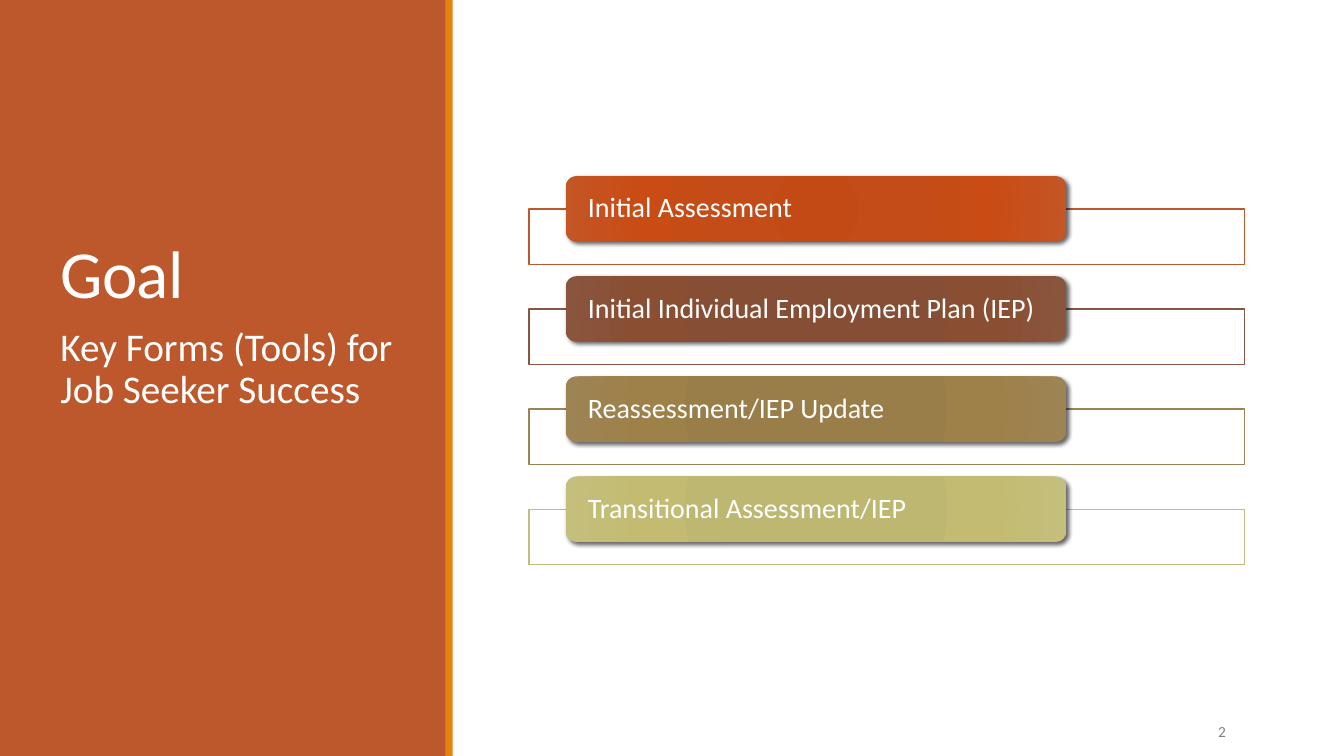
"""Build the slide that lists the key forms for job seeker success."""
import pptx
import pptx.util
import pptx.dml.color
import pptx.enum.shapes
import pptx.enum.text
import pptx.oxml
import pptx.oxml.ns

TITLE = "Goal"
SUBTITLE = "Key Forms (Tools) for Job Seeker Success"
PAGE_NUMBER = "2"
FORMS = [
    ("Initial Assessment", "BD582C", ("C44A15", "C34C18", "C94C15", "C45525")),
    ("Initial Individual Employment Plan (IEP)", "865640", ("874C32", "864E34", "8A4E33", "8A553D")),
    ("Reassessment/IEP Update", "9B8357", ("9A7D48", "9A7E4A", "9E8049", "9E8454")),
    ("Transitional Assessment/IEP", "C2BC80", ("BEB76E", "BEB771", "C3BB71", "C5BF7D")),
]
PANELS = [("BD582C", (0, 0, 319, 540)), ("E48312", (318.2, 0, 5.2, 540))]
GRADIENT_STOPS = (0, 34, 70, 100)
FIRST_TOP, ROW_STEP = 125.8, 71.5
PILL_LEFT, PILL_WIDTH, PILL_HEIGHT = 404, 357.8, 46.8
FRAME_LEFT, FRAME_WIDTH, FRAME_HEIGHT, FRAME_DROP = 378, 511.2, 39.6, 23.4

Pt = pptx.util.Pt
SHAPE = pptx.enum.shapes.MSO_SHAPE
ANCHOR = pptx.enum.text.MSO_ANCHOR
ALIGN = pptx.enum.text.PP_ALIGN
NAMESPACE = pptx.oxml.ns.nsdecls("a")


def color(value):
    return pptx.dml.color.RGBColor.from_string(value)


def assign(target, values):
    for name, value in values.items():
        setattr(target, name, value)


def place(box, left, top, width, height):
    assign(box, {"left": Pt(left), "top": Pt(top), "width": Pt(width), "height": Pt(height)})


def write(box, text, size, ink="FFFFFF", frame_format=None, para_format=None):
    frame = box.text_frame
    assign(frame, {"word_wrap": True, "auto_size": pptx.enum.text.MSO_AUTO_SIZE.NONE})
    assign(frame, frame_format or {})
    para = frame.paragraphs[0]
    assign(para, {"alignment": ALIGN.LEFT, **(para_format or {})})
    span = para.add_run()
    span.text = text
    assign(span.font, {"size": Pt(size), "name": "Calibri"})
    span.font.color.rgb = color(ink)
    return para, span


def add_block(page, kind, position, fill):
    block = page.shapes.add_shape(kind, *map(Pt, position))
    block.shadow.inherit = False
    block.fill.solid()
    block.fill.fore_color.rgb = color(fill)
    block.line.fill.background()
    return block


def add_frame(page, top, edge):
    frame = add_block(page, SHAPE.RECTANGLE, (FRAME_LEFT, top, FRAME_WIDTH, FRAME_HEIGHT), "FFFFFF")
    frame.line.color.rgb = color(edge)
    frame.line.width = Pt(1)
    white = frame.element.spPr.find(pptx.oxml.ns.qn("a:solidFill"))[0]
    white.append(pptx.oxml.parse_xml(f'<a:alpha {NAMESPACE} val="90000"/>'))


def add_pill(page, top, text, shades):
    position = (PILL_LEFT, top, PILL_WIDTH, PILL_HEIGHT)
    pill = add_block(page, SHAPE.ROUNDED_RECTANGLE, position, shades[0])
    stops = "".join(
        f'<a:gs pos="{stop * 1000}"><a:srgbClr val="{shade}"/></a:gs>'
        for stop, shade in zip(GRADIENT_STOPS, shades)
    )
    gradient = pptx.oxml.parse_xml(
        f'<a:gradFill {NAMESPACE} rotWithShape="1"><a:gsLst>{stops}</a:gsLst><a:path path="circle">'
        '<a:fillToRect l="100000" t="100000" r="100000" b="100000"/></a:path></a:gradFill>'
    )
    shadow = pptx.oxml.parse_xml(
        f'<a:outerShdw {NAMESPACE} blurRad="{Pt(3)}" dist="{Pt(2)}" dir="2700000" algn="tl" '
        'rotWithShape="0"><a:srgbClr val="000000"><a:alpha val="60000"/></a:srgbClr></a:outerShdw>'
    )
    properties = pill.element.spPr
    properties.replace(properties.find(pptx.oxml.ns.qn("a:solidFill")), gradient)
    properties.find(pptx.oxml.ns.qn("a:effectLst")).append(shadow)
    insets = {"margin_left": Pt(13.7), "margin_right": Pt(13.7), "margin_top": 0, "margin_bottom": 0}
    write(pill, text, 20, frame_format={"vertical_anchor": ANCHOR.MIDDLE, **insets},
          para_format={"line_spacing": 0.9})


def main():
    deck = pptx.Presentation()
    assign(deck, {"slide_width": Pt(960), "slide_height": Pt(540)})
    page = deck.slides.add_slide(deck.slide_layouts[1])
    title, body = page.placeholders

    for fill, position in PANELS:
        add_block(page, SHAPE.RECTANGLE, position, fill)
    for box in (title, body):
        box.element.getparent().append(box.element)

    place(title, 36, 46.8, 252, 180)
    heading, span = write(title, TITLE, 48, frame_format={"vertical_anchor": ANCHOR.BOTTOM},
                          para_format={"line_spacing": 0.85})
    span.font._element.set("spc", "-50")

    place(body, 36, 230.4, 252, 266.4)
    para, span = write(body, SUBTITLE, 28, para_format={
        "line_spacing": 0.9, "space_before": Pt(12), "space_after": Pt(2)})
    settings = para._p.get_or_add_pPr()
    settings.set("marL", "0")
    settings.set("indent", "0")
    settings.append(pptx.oxml.parse_xml(f"<a:buNone {NAMESPACE}/>"))

    for row, (text, edge, shades) in enumerate(FORMS):
        top = FIRST_TOP + row * ROW_STEP
        add_frame(page, top + FRAME_DROP, edge)
        add_pill(page, top, text, shades)

    number = page.shapes.add_textbox(*map(Pt, (779.8, 508.3, 103, 28.8)))
    write(number, PAGE_NUMBER, 11, "808080", {"vertical_anchor": ANCHOR.MIDDLE},
          {"alignment": ALIGN.RIGHT, "space_after": Pt(6)})
    deck.save("out.pptx")


if __name__ == "__main__":
    main()
